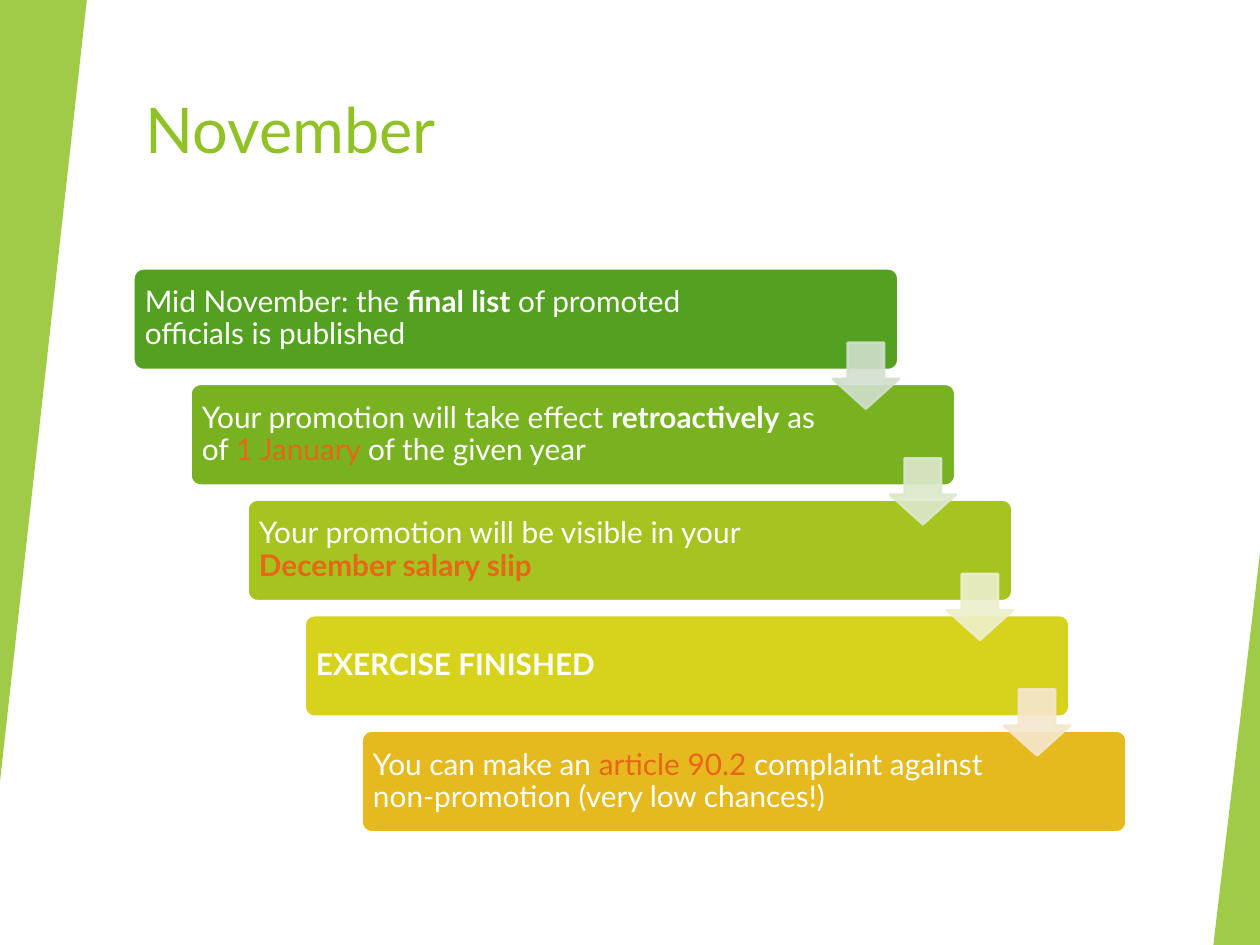
"""Build the November slide: a descending staircase of steps linked by arrows."""
from lxml import etree
from pptx import Presentation
from pptx import util as u
from pptx.dml.color import RGBColor
from pptx.enum import shapes, text
from pptx.oxml import ns

WHITE, GREEN, ORANGE = "FFFFFF", "90C226", "E76618"


def paint(shape, fill, line=None, opacity=100):
    shape.shadow.inherit = False
    shape.fill.solid()
    shape.fill.fore_color.rgb = RGBColor.from_string(fill)
    if line:
        shape.line.color.rgb = RGBColor.from_string(line)
        shape.line.width = u.Pt(1.5)
    else:
        shape.line.fill.background()
    if opacity < 100:
        for color in shape.element.spPr.iter(ns.qn("a:srgbClr")):
            etree.SubElement(color, ns.qn("a:alpha"), val=str(opacity * 1000))


def write(shape, runs, size, frame_format):
    frame = shape.text_frame
    for attribute, value in frame_format.items():
        setattr(frame, attribute, value)
    paragraph = frame.paragraphs[0]
    paragraph.alignment = text.PP_ALIGN.LEFT
    paragraph.line_spacing = 0.9 if size < 20 else 1.0
    for words, color, bold in runs:
        run = paragraph.add_run()
        run.text = words
        run.font.color.rgb = RGBColor.from_string(color)
        for attribute, value in {"name": "Lato", "size": u.Pt(size), "bold": bold}.items():
            setattr(run.font, attribute, value)


deck = Presentation()
deck.slide_width, deck.slide_height = u.Cm(25.4), u.Cm(19.05)
slide = deck.slides.add_slide(deck.slide_layouts[6])

title = slide.shapes.add_textbox(u.Cm(2.69), u.Cm(1.7), u.Cm(21.23), u.Cm(3.05))
write(title, [("November", GREEN, False)], 36,
      {"word_wrap": True, "vertical_anchor": text.MSO_ANCHOR.TOP})

triangle = shapes.MSO_SHAPE.ISOSCELES_TRIANGLE
left_wedge = slide.shapes.add_shape(triangle, 0, 0, u.Cm(1.75), u.Cm(15.75))
left_wedge.rotation = 180
right_wedge = slide.shapes.add_shape(triangle, u.Cm(24.46), u.Cm(11.15), u.Cm(0.94), u.Cm(7.9))
for wedge in (left_wedge, right_wedge):
    wedge.adjustments[0] = 1
    paint(wedge, GREEN, opacity=85)

steps = [
    ("54A021", [("Mid November: the ", WHITE, False), ("final list", WHITE, True),
                (" of promoted officials is published", WHITE, False)]),
    ("79B220", [("Your promotion will take effect ", WHITE, False),
                ("retroactively", WHITE, True), (" as of ", WHITE, False),
                ("1 January ", ORANGE, False), ("of the given year", WHITE, False)]),
    ("A5C41F", [("Your promotion will be visible in your ", WHITE, False),
                ("December salary slip", ORANGE, True)]),
    ("D7D31D", [("EXERCISE FINISHED", WHITE, True)]),
    ("E6B91E", [("You can make an ", WHITE, False), ("article 90.2 ", ORANGE, False),
                ("complaint against non-promotion (very low chances!)", WHITE, False)]),
]
arrow_colors = ["D1DFCD", "DCE8CC", "EEEFCC", "F5E7CD"]
step_right, step_down = 1.15, 2.33

for i, (color, runs) in enumerate(steps):
    step = slide.shapes.add_shape(
        shapes.MSO_SHAPE.ROUNDED_RECTANGLE, u.Cm(2.69 + i * step_right),
        u.Cm(5.41 + i * step_down), u.Cm(15.42), u.Cm(2.05))
    step.adjustments[0] = 0.1
    paint(step, color, WHITE)
    write(step, runs, 17, {
        "word_wrap": True, "vertical_anchor": text.MSO_ANCHOR.MIDDLE,
        "margin_left": u.Cm(0.17), "margin_right": u.Cm(2.65 if i else 2.5),
        "margin_top": u.Cm(0.17), "margin_bottom": u.Cm(0.17)})

for i, color in enumerate(arrow_colors):
    arrow = slide.shapes.add_shape(
        shapes.MSO_SHAPE.DOWN_ARROW, u.Cm(16.79 + i * step_right),
        u.Cm(6.91 + i * step_down), u.Cm(1.33), u.Cm(1.33))
    arrow.adjustments[0], arrow.adjustments[1] = 0.55, 0.45
    paint(arrow, color, color, opacity=90)

deck.save("out.pptx")
